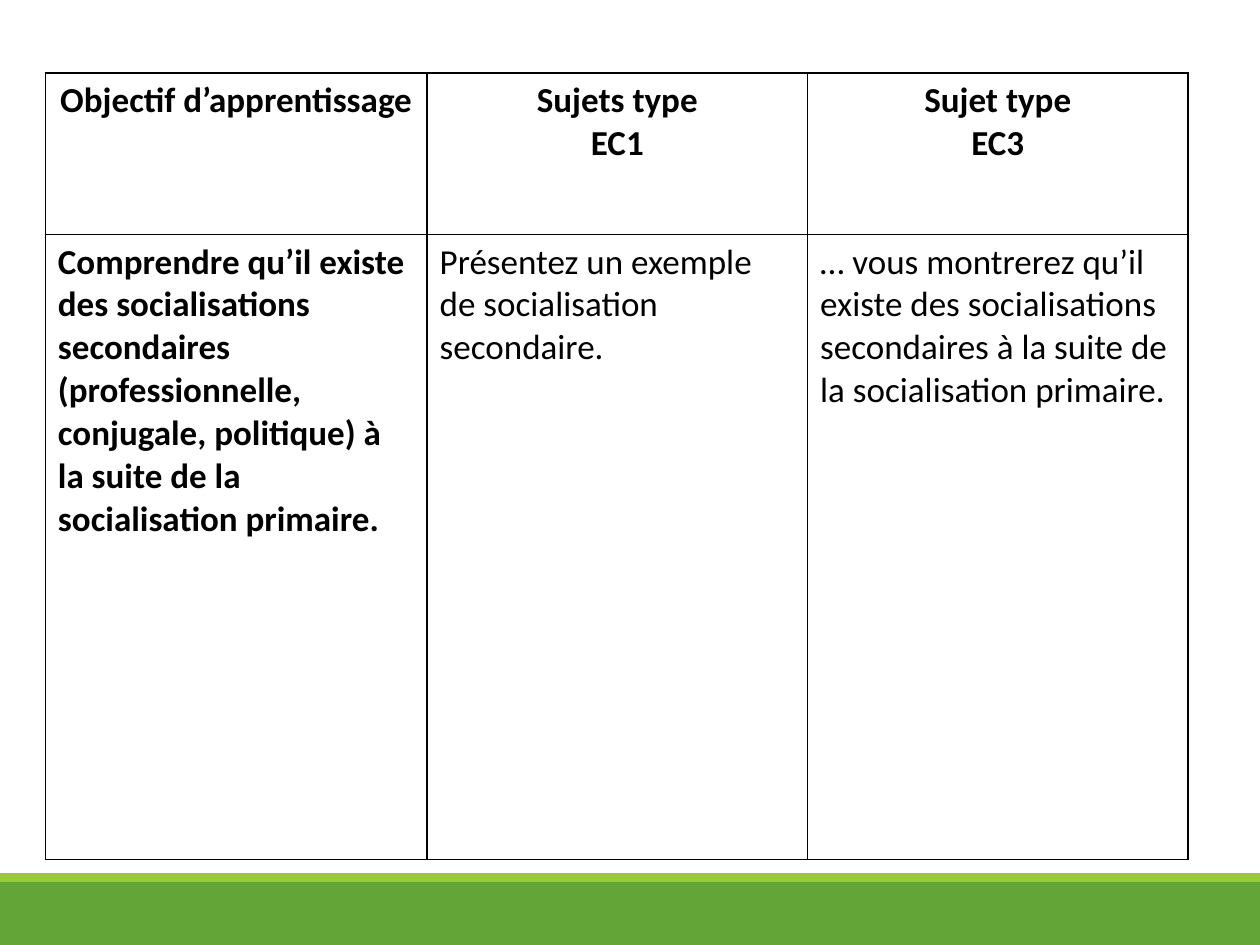
from lxml import etree
from pptx import Presentation
from pptx.dml.color import RGBColor
from pptx.enum import shapes, text
from pptx.oxml import ns
from pptx.util import Inches, Pt

BLACK = RGBColor(0, 0, 0)
WHITE = RGBColor(0xFF, 0xFF, 0xFF)
GREEN = RGBColor(0x63, 0xA5, 0x37)
LIME = RGBColor(0x99, 0xCB, 0x38)

WIDTHS = (3.03, 3.02, 3.02)
HEIGHTS = (1.28, 4.96)
ROWS = (
    ("Objectif d’apprentissage", "Sujets type\nEC1", "Sujet type\nEC3"),
    (
        "Comprendre qu’il existe des socialisations secondaires "
        "(professionnelle, conjugale, politique) à la suite de la "
        "socialisation primaire.",
        "Présentez un exemple de socialisation secondaire.",
        "… vous montrerez qu’il existe des socialisations secondaires "
        "à la suite de la socialisation primaire.",
    ),
)


def write(frame, words, size=20, bold=False, color=BLACK, align=text.PP_ALIGN.LEFT):
    """Fill a text frame, one paragraph per line of words."""
    frame.text = words
    for para in frame.paragraphs:
        para.alignment = align
        for run in para.runs:
            font = run.font
            font.name, font.size, font.bold = "Calibri", Pt(size), bold
            font.color.rgb = color


def band(slide, top, height, color):
    """Draw a plain strip across the slide."""
    strip = slide.shapes.add_shape(
        shapes.MSO_SHAPE.RECTANGLE, 0, Inches(top), Inches(10), Inches(height)
    )
    strip.shadow.inherit = False
    strip.fill.solid()
    strip.fill.fore_color.rgb = color
    strip.line.fill.background()


def border(cell, color=BLACK, width=1):
    """Rule all four sides of a cell."""
    props = cell._tc.get_or_add_tcPr()
    for place, side in enumerate(("lnL", "lnR", "lnT", "lnB")):
        line = etree.Element(ns.qn(f"a:{side}"), w=str(Pt(width)))
        fill = etree.SubElement(line, ns.qn("a:solidFill"))
        etree.SubElement(fill, ns.qn("a:srgbClr"), val=str(color))
        props.insert(place, line)


def grid(slide, left, top):
    """Add the table of goals and exam topics."""
    table = slide.shapes.add_table(
        len(ROWS), len(WIDTHS), Inches(left), Inches(top),
        Inches(sum(WIDTHS)), Inches(sum(HEIGHTS)),
    ).table
    for col, width in zip(table.columns, WIDTHS):
        col.width = Inches(width)
    for row, height in zip(table.rows, HEIGHTS):
        row.height = Inches(height)
    for r, row in enumerate(ROWS):
        for c, words in enumerate(row):
            cell = table.cell(r, c)
            cell.fill.solid()
            cell.fill.fore_color.rgb = WHITE
            border(cell)
            align = text.PP_ALIGN.CENTER if r == 0 else text.PP_ALIGN.LEFT
            write(cell.text_frame, words, bold=r == 0 or c == 0, align=align)


def main():
    """Build the slide and save it."""
    deck = Presentation()
    deck.slide_width, deck.slide_height = Inches(10), Inches(7.5)
    slide = deck.slides.add_slide(deck.slide_layouts[6])
    band(slide, 7, 0.5, GREEN)
    band(slide, 6.93, 0.07, LIME)
    grid(slide, 0.36, 0.58)
    deck.save("out.pptx")


main()
